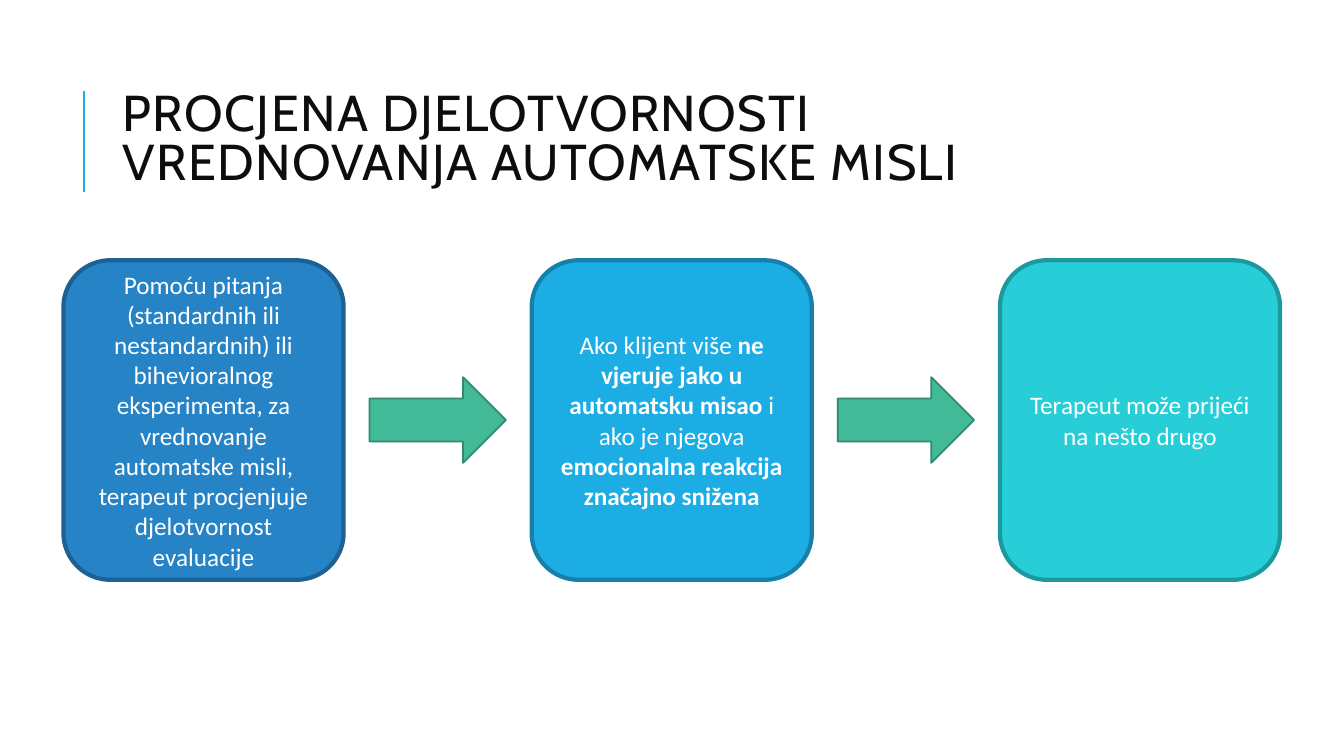
from dataclasses import dataclass

from lxml.etree import SubElement
from pptx import Presentation
from pptx.dml.color import RGBColor as RGB
from pptx.enum.shapes import MSO_CONNECTOR as CONN, MSO_SHAPE as SHAPE
from pptx.enum.text import MSO_ANCHOR as ANCHOR, PP_ALIGN as ALIGN
from pptx.oxml.ns import qn
from pptx.util import Cm, Pt


@dataclass(frozen=True)
class Theme:
    title_font: str = "Cabin"
    body_font: str = "Calibri"
    title_size: float = 36
    body_size: float = 18
    ink: str = "0D0D0D"
    light: str = "FFFFFF"
    accent: str = "1CADE4"
    arrow: tuple = ("42BA97", "318A70")
    boxes: tuple = (("2683C6", "1C6192"), ("1CADE4", "1580A9"), ("27CED7", "1D989F"))


def write(tf, runs, *, font, size, color, align=ALIGN.LEFT, line_spacing=1.0, tracking=0):
    """Fill a text frame with (text, bold) runs in one paragraph."""
    tf.word_wrap = True
    tf.vertical_anchor = ANCHOR.MIDDLE
    p = tf.paragraphs[0]
    p.alignment = align
    p.line_spacing = line_spacing
    for text, bold in runs:
        r = p.add_run()
        r.text = text
        r.font.name = font
        r.font.size = Pt(size)
        r.font.bold = bold
        r.font.color.rgb = RGB.from_string(color)
        if tracking:
            r.font._element.set("spc", str(round(tracking * 100)))


class SlideBuilder:
    def __init__(self, slide, theme):
        self.s = slide
        self.theme = theme

    def title(self, text, x, y, w, h):
        t = self.theme
        tb = self.s.shapes.add_textbox(Cm(x), Cm(y), Cm(w), Cm(h))
        write(tb.text_frame, [(text, False)], font=t.title_font, size=t.title_size,
              color=t.ink, line_spacing=0.8, tracking=1)

    def rule(self, x, top, bottom):
        cx = self.s.shapes.add_connector(CONN.STRAIGHT, Cm(x), Cm(bottom), Cm(x), Cm(top))
        cx.line.color.rgb = RGB.from_string(self.theme.accent)
        cx.line.width = Pt(1.5)
        SubElement(cx._element.spPr, qn("a:effectLst"))

    def shape(self, kind, x, y, w, h, colors, weight):
        fill, line = colors
        sp = self.s.shapes.add_shape(kind, Cm(x), Cm(y), Cm(w), Cm(h))
        sp.shadow.inherit = False
        sp.fill.solid()
        sp.fill.fore_color.rgb = RGB.from_string(fill)
        sp.line.color.rgb = RGB.from_string(line)
        sp.line.width = Pt(weight)
        return sp

    def box(self, runs, x, y, w, h, colors):
        t = self.theme
        sp = self.shape(SHAPE.ROUNDED_RECTANGLE, x, y, w, h, colors, 3)
        write(sp.text_frame, runs, font=t.body_font, size=t.body_size,
              color=t.light, align=ALIGN.CENTER)

    def arrow(self, x, y, w, h):
        self.shape(SHAPE.RIGHT_ARROW, x, y, w, h, self.theme.arrow, 1.25)


STEPS = [
    [("Pomoću pitanja (standardnih ili nestandardnih) ili bihevioralnog eksperimenta, "
      "za vrednovanje automatske misli, terapeut procjenjuje djelotvornost evaluacije", False)],
    [("Ako klijent više ", False), ("ne vjeruje jako u automatsku misao ", True),
     ("i ako je njegova ", False), ("emocionalna reakcija značajno snižena", True)],
    [("Terapeut može prijeći na nešto drugo", False)],
]


def main():
    prs = Presentation()
    prs.slide_width, prs.slide_height = Cm(33.87), Cm(19.05)
    theme = Theme()
    b = SlideBuilder(prs.slides.add_slide(prs.slide_layouts[6]), theme)

    # Heading with its vertical rule
    b.rule(2.11, 2.3, 4.84)
    b.title("PROCJENA DJELOTVORNOSTI VREDNOVANJA AUTOMATSKE MISLI", 2.84, 2.34, 27, 2.46)

    # Three steps, with an arrow centred in each gap
    left, top, box_w, box_h, pitch = 1.6, 6.56, 7.06, 8.05, 11.8
    arrow_w, arrow_h = 3.44, 2.16
    arrow_dx = (box_w + pitch - arrow_w) / 2
    arrow_y = top + (box_h - arrow_h) / 2
    for i, (runs, colors) in enumerate(zip(STEPS, theme.boxes)):
        x = left + i * pitch
        b.box(runs, x, top, box_w, box_h, colors)
        if i < len(STEPS) - 1:
            b.arrow(x + arrow_dx, arrow_y, arrow_w, arrow_h)

    prs.save("out.pptx")


if __name__ == "__main__":
    main()
